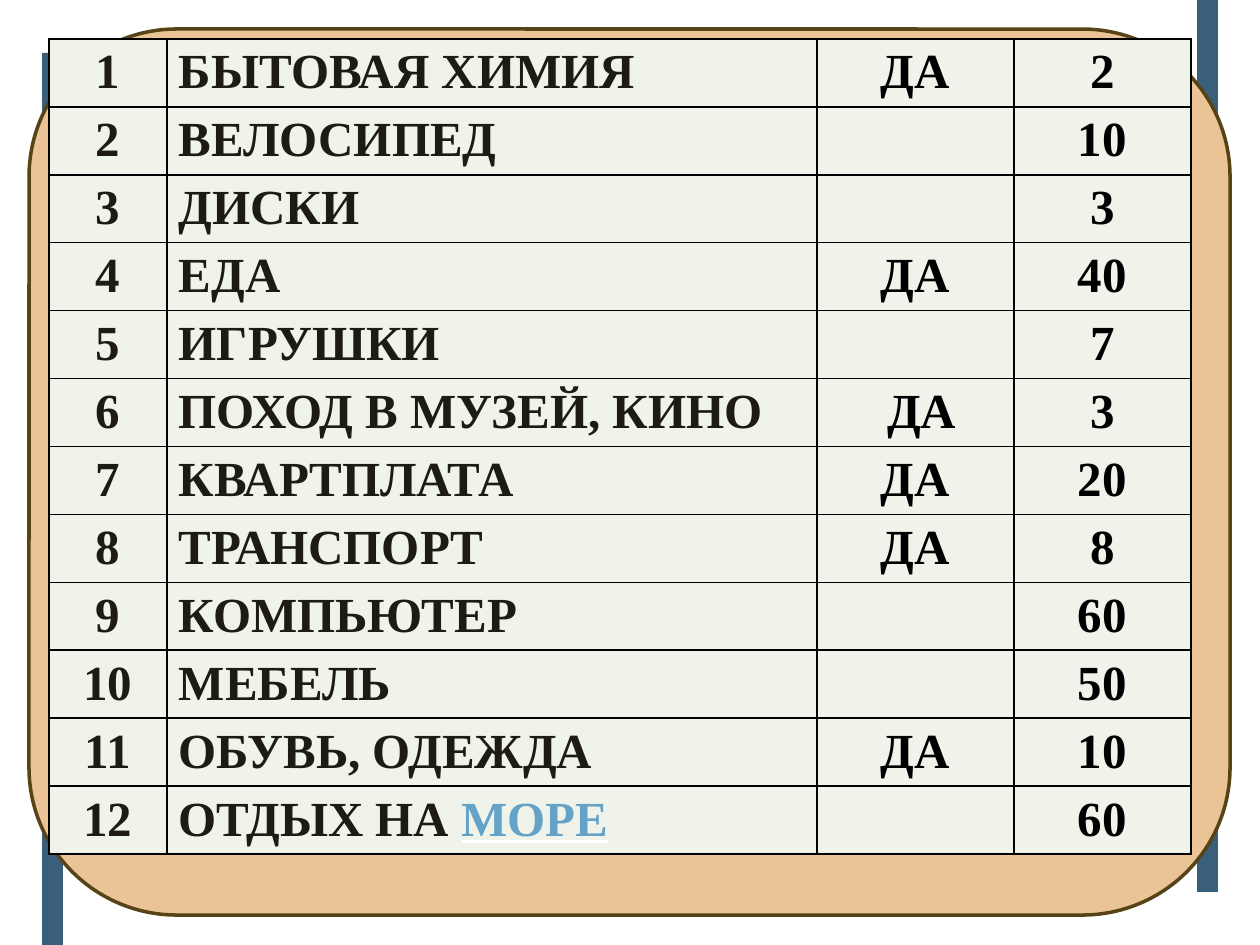
from lxml.etree import SubElement
from pptx import Presentation
from pptx.dml.color import RGBColor
from pptx.enum.shapes import MSO_SHAPE as Shape
from pptx.enum.text import PP_ALIGN as Align
from pptx.oxml import parse_xml
from pptx.oxml.ns import nsdecls, qn
from pptx.util import Emu, Pt

EMU_PER_PX = 914400 / 126

BLUE = RGBColor(0x3A, 0x5F, 0x7B)
PEACH = RGBColor(0xEA, 0xC3, 0x97)
BROWN = RGBColor(0x56, 0x44, 0x17)
CELL_FILL = RGBColor(0xEF, 0xF3, 0xE9)
INK = RGBColor(0x1E, 0x1C, 0x11)
BLACK = RGBColor(0x00, 0x00, 0x00)
WHITE = RGBColor(0xFF, 0xFF, 0xFF)
LINK = RGBColor(0x64, 0xA2, 0xC8)

TEXT_FORMAT = {"name": "Times New Roman", "size": Pt(28), "bold": True}
WIDE = {"margin_left": 12, "margin_right": 12}
NARROW = {"margin_left": 1, "margin_right": 1}
# width, alignment, text colour and margins of each column
COLUMNS = [
    (118, Align.CENTER, INK, WIDE),
    (650, Align.LEFT, INK, WIDE),
    (197, Align.CENTER, BLACK, NARROW),
    (177, Align.CENTER, BLACK, NARROW),
]
LINKED_WORD = "МОРЕ"
EXPENSES = [
    ("БЫТОВАЯ ХИМИЯ", "ДА", 2),
    ("ВЕЛОСИПЕД", "", 10),
    ("ДИСКИ", "", 3),
    ("ЕДА", "ДА", 40),
    ("ИГРУШКИ", "", 7),
    ("ПОХОД В МУЗЕЙ, КИНО", " ДА", 3),
    ("КВАРТПЛАТА", "ДА", 20),
    ("ТРАНСПОРТ", "ДА", 8),
    ("КОМПЬЮТЕР", "", 60),
    ("МЕБЕЛЬ", "", 50),
    ("ОБУВЬ, ОДЕЖДА", "ДА", 10),
    ("ОТДЫХ НА " + LINKED_WORD, "", 60),
]


def px(length):
    return Emu(round(length * EMU_PER_PX))


def add_block(slide, kind, box, color):
    shape = slide.shapes.add_shape(kind, *map(px, box))
    shape.shadow.inherit = False
    shape.fill.solid()
    shape.fill.fore_color.rgb = color
    shape.line.fill.background()
    return shape


def add_side_bars(slide, left, top, width, height):
    """Two bars at the outer sides of the box, the left one shifted down."""
    bar_width, shift = 21, 53
    bar_height = height - shift
    add_block(slide, Shape.RECTANGLE, (left + width - bar_width, top, bar_width, bar_height), BLUE)
    add_block(slide, Shape.RECTANGLE, (left, top + shift, bar_width, bar_height), BLUE)


def add_panel(slide, *box):
    panel = add_block(slide, Shape.ROUNDED_RECTANGLE, box, PEACH)
    panel.line.color.rgb = BROWN
    panel.line.width = Pt(2)


def add_borders(cell):
    properties = cell._tc.get_or_add_tcPr()
    for index, side in enumerate(("lnL", "lnR", "lnT", "lnB")):
        properties.insert(index, parse_xml(
            f'<a:{side} {nsdecls("a")} w="{Pt(0.96)}"><a:solidFill>'
            f'<a:srgbClr val="{BLACK}"/></a:solidFill></a:{side}>'))


def add_run(paragraph, text, color):
    run = paragraph.add_run()
    run.text = text
    for name, value in TEXT_FORMAT.items():
        setattr(run.font, name, value)
    run.font.color.rgb = color
    return run


def add_linked_word(paragraph):
    """A coloured word with a white underline."""
    font = add_run(paragraph, LINKED_WORD, LINK).font
    font.underline = True
    properties = font._element
    underline = SubElement(properties, qn("a:uFill"))
    fill = SubElement(underline, qn("a:solidFill"))
    SubElement(fill, qn("a:srgbClr"), val=str(WHITE))
    properties.find(qn("a:latin")).addprevious(underline)


def fill_cell(cell, text, alignment, color, margins):
    for name, value in margins.items():
        setattr(cell, name, px(value))
    cell.fill.solid()
    cell.fill.fore_color.rgb = CELL_FILL
    add_borders(cell)
    paragraph = cell.text_frame.paragraphs[0]
    paragraph.alignment = alignment
    plain, linked, _ = text.partition(LINKED_WORD)
    if plain:
        add_run(paragraph, plain, color)
    if linked:
        add_linked_word(paragraph)


def add_expense_table(slide, left, top, width, height):
    box = map(px, (left, top, width, height))
    table = slide.shapes.add_table(len(EXPENSES), len(COLUMNS), *box).table
    table.first_row = table.horz_banding = False
    for column, (column_width, *_) in zip(table.columns, COLUMNS):
        column.width = px(column_width)
    for number, (row, expense) in enumerate(zip(table.rows, EXPENSES), start=1):
        row.height = px(height / len(EXPENSES))
        for cell, value, (_, *style) in zip(row.cells, (number, *expense), COLUMNS):
            fill_cell(cell, str(value), *style)


def main():
    presentation = Presentation()
    presentation.slide_width, presentation.slide_height = px(1260), px(945)
    slide = presentation.slides.add_slide(presentation.slide_layouts[6])
    add_side_bars(slide, 42, 0, 1176, 945)
    add_panel(slide, 29, 29, 1201, 886)
    add_expense_table(slide, 49, 39, 1142, 815)
    presentation.save("out.pptx")


if __name__ == "__main__":
    main()
